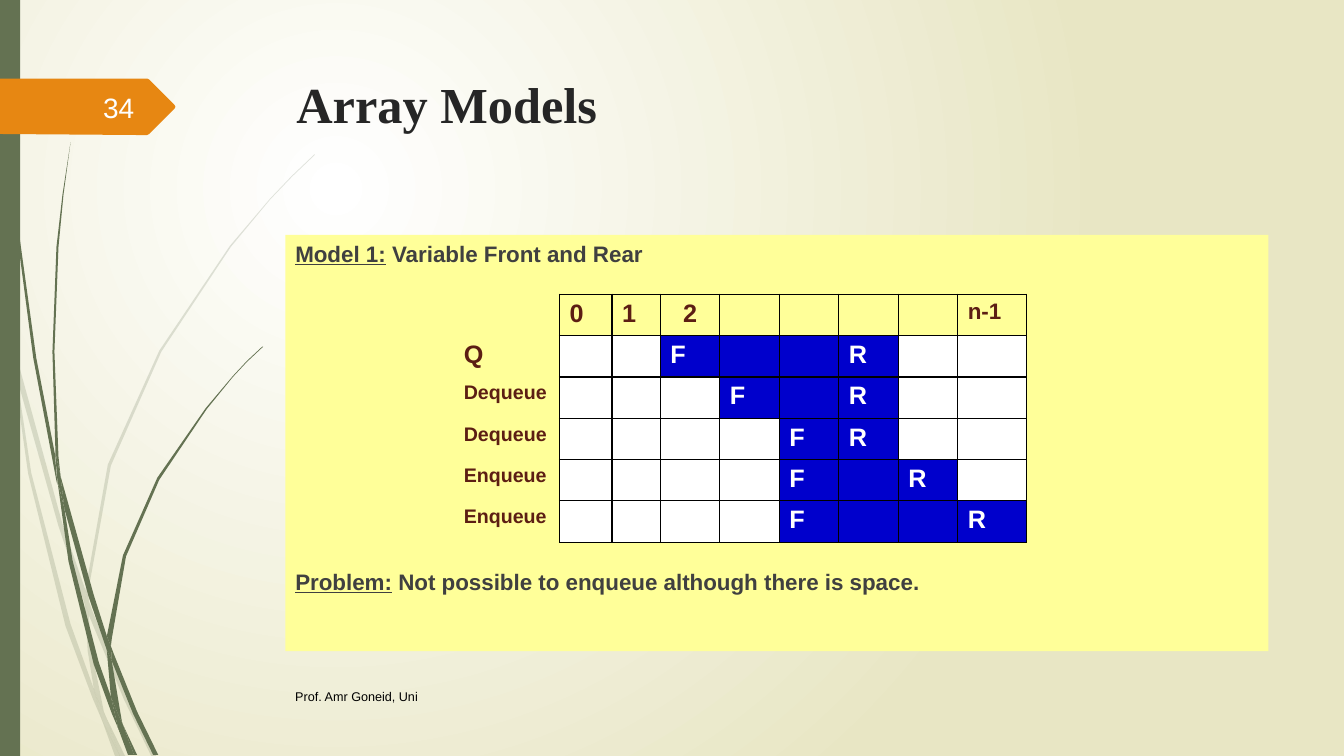
"""Build the slide on array models of a queue with variable front and rear."""
from lxml.etree import SubElement
from pptx import Presentation
from pptx.dml.color import RGBColor
from pptx.enum.shapes import MSO_SHAPE
from pptx.enum.text import MSO_ANCHOR, PP_ALIGN
from pptx.oxml.ns import qn
from pptx.util import Inches, Pt

WHITE = RGBColor(0xFF, 0xFF, 0xFF)
OFF_WHITE = RGBColor(0xFE, 0xFF, 0xFF)
BLACK = RGBColor(0, 0, 0)
CREAM = RGBColor(0xE8, 0xE6, 0xC4)
GREEN = RGBColor(0x64, 0x72, 0x52)
ORANGE = RGBColor(0xE7, 0x87, 0x12)
YELLOW = RGBColor(0xFF, 0xFF, 0x99)
BLUE = RGBColor(0, 0, 0xCC)
BROWN = RGBColor(0x5C, 0x1E, 0x13)
DARK_GRAY = RGBColor(0x40, 0x40, 0x40)
TITLE_GRAY = RGBColor(0x26, 0x26, 0x26)

TITLE = "Array Models"
MODEL = [("Model 1:", True), (" Variable Front and Rear", False)]
PROBLEM = [("Problem:", True), (" Not possible to enqueue although there is space.", False)]
FOOTER = "Prof. Amr Goneid, Uni"
PAGE_NUMBER = "34"

HEADINGS = [(0, "0", 18, PP_ALIGN.LEFT), (1, "1", 18, PP_ALIGN.LEFT),
            (2, "2", 18, PP_ALIGN.CENTER), (7, "n-1", 16, PP_ALIGN.LEFT)]
QUEUE_STATES = [("Q", 18, 2, 5), ("Dequeue", 14, 3, 5), ("Dequeue", 14, 4, 5),
                ("Enqueue", 14, 4, 6), ("Enqueue", 14, 4, 7)]
COLUMN_WIDTHS = [1.05, 0.52, 0.48] + [0.59] * 5 + [0.68]
ROW_HEIGHT = 0.41

PALE_STRANDS = [
    [(0.11, 3.5), (0.09, 3.22), (0, 2.82), (0, 2.99), (0.1, 3.44)],
    [(0.58, 5.22), (0.84, 5.99), (0.85, 5.86), (0.62, 5.2), (0.14, 3.45), (0.17, 3.76)],
    [(0.92, 6.07), (0.88, 5.96), (0.88, 6.1), (1.23, 6.94), (1.5, 7.5), (1.55, 7.5),
     (1.27, 6.92)],
    [(1.19, 7.5), (1.24, 7.5), (1.05, 7.11)],
    [(0.93, 6.83), (0.7, 6.19), (0.31, 4.69), (0.17, 3.76), (0.11, 3.5), (0.28, 4.7),
     (0.65, 6.21), (0.92, 6.93), (1.01, 7.14), (0.99, 7.07)],
    [(0.84, 5.99), (0.87, 6.46), (0.93, 6.83), (0.96, 6.92), (1.05, 7.11), (1.03, 7.06),
     (0.91, 6.46), (0.88, 6.1), (0.88, 6.08)],
    [(0.88, 5.84), (1.1, 4.62), (1.6, 3.49), (2.29, 2.45), (2.68, 1.98), (2.9, 1.75),
     (3.12, 1.54), (3.12, 1.53), (2.89, 1.75), (2.68, 1.97), (2.28, 2.44), (1.58, 3.48),
     (1.07, 4.61), (0.85, 5.84), (0.85, 5.86), (0.88, 5.96)],
    [(1.01, 7.14), (1.14, 7.5), (1.19, 7.5)],
    [(0.88, 6.08), (0.88, 6.1), (0.88, 5.96), (0.85, 5.86), (0.84, 5.99)],
    [(0.96, 6.92), (0.93, 6.83), (0.99, 7.07), (1.01, 7.14), (1.19, 7.5), (1.05, 7.11)],
]
DARK_STRANDS = [
    [(0.07, 1.1), (0.17, 2.33), (0.33, 3.55), (0.56, 4.77), (0.57, 4.81), (0.55, 4.57),
     (0.55, 4.53), (0.36, 3.55), (0.19, 2.32), (0.08, 1.09), (0.05, 0.48), (0.04, 0),
     (0.03, 0), (0.04, 0.48)],
    [(0.88, 5.92), (1.06, 6.45), (1.06, 6.31), (0.93, 5.9), (0.6, 4.72), (0.64, 5.05)],
    [(1.13, 6.49), (1.1, 6.41), (1.11, 6.56), (1.32, 7.08), (1.52, 7.49), (1.57, 7.49),
     (1.36, 7.06)],
    [(1.1, 6.91), (0.98, 6.57), (0.72, 5.56), (0.64, 5.05), (0.57, 4.77), (0.68, 5.57),
     (0.93, 6.59), (1.11, 7.08), (1.17, 7.22), (1.16, 7.17)],
    [(0.6, 4.72), (0.58, 4.53), (0.54, 3.49), (0.58, 2.45), (0.63, 1.93), (0.7, 1.41),
     (0.62, 1.93), (0.56, 2.45), (0.52, 3.49), (0.55, 4.49)],
    [(1.33, 7.49), (1.36, 7.49), (1.22, 7.19)],
    [(0.57, 4.77), (0.64, 5.05), (0.6, 4.72), (0.55, 4.49), (0.55, 4.53)],
    [(1.11, 6.33), (1.25, 5.52), (1.58, 4.76), (2.05, 4.06), (2.31, 3.74), (2.45, 3.59),
     (2.61, 3.44), (2.6, 3.44), (2.45, 3.58), (2.31, 3.73), (2.04, 4.05), (1.56, 4.74),
     (1.22, 5.51), (1.06, 6.31), (1.1, 6.41)],
    [(1.17, 7.22), (1.27, 7.49), (1.31, 7.49)],
    [(1.06, 6.45), (1.1, 6.91), (1.16, 7.06), (1.22, 7.19), (1.21, 7.16), (1.11, 6.56),
     (1.09, 6.51)],
    [(1.06, 6.45), (1.09, 6.51), (1.11, 6.56), (1.1, 6.41), (1.06, 6.31)],
    [(1.16, 7.06), (1.1, 6.91), (1.16, 7.17), (1.17, 7.22), (1.3, 7.49), (1.33, 7.49),
     (1.22, 7.19)],
]
PAGE_TAG = [(1.73, 1.08), (1.48, 1.33), (1.46, 1.34), (1.36, 1.34), (0, 1.33), (0, 0.78),
            (1.46, 0.78), (1.48, 0.79), (1.73, 1.04), (1.74, 1.06)]


def write(paragraph, text, size, color, font="Arial", bold=False, underline=False,
          align=PP_ALIGN.LEFT):
    paragraph.alignment = align
    run = paragraph.add_run()
    run.text = text
    run.font.name = font
    run.font.size = Pt(size)
    run.font.bold = bold
    run.font.underline = underline
    run.font.color.rgb = color


def paint(shape, color):
    shape.shadow.inherit = False
    shape.fill.solid()
    shape.fill.fore_color.rgb = color
    shape.line.fill.background()


def add_outline(slide, points, color, opacity=100):
    corners = [(Inches(x), Inches(y)) for x, y in points]
    builder = slide.shapes.build_freeform(*corners[0])
    builder.add_line_segments(corners[1:], close=True)
    shape = builder.convert_to_shape()
    paint(shape, color)
    if opacity < 100:
        color_element = shape.element.spPr.find(qn("a:solidFill"))[0]
        SubElement(color_element, qn("a:alpha"), val=str(opacity * 1000))


def add_rectangle(slide, box, color):
    shape = slide.shapes.add_shape(MSO_SHAPE.RECTANGLE, *map(Inches, box))
    paint(shape, color)
    return shape


def add_text(slide, box, text, anchor=MSO_ANCHOR.MIDDLE, **style):
    frame = slide.shapes.add_textbox(*map(Inches, box)).text_frame
    frame.word_wrap = True
    frame.vertical_anchor = anchor
    write(frame.paragraphs[0], text, **style)


def add_borders(cell, sides):
    properties = cell._tc.get_or_add_tcPr()
    for side in sides:
        line = SubElement(properties, qn(f"a:ln{side}"), w=str(Pt(1)))
        fill = SubElement(line, qn("a:solidFill"))
        SubElement(fill, qn("a:srgbClr"), val=str(BLACK))


def set_background(slide):
    fill = slide.background.fill
    fill.gradient()
    for stop, color, position in zip(fill.gradient_stops, (WHITE, CREAM), (0, 1)):
        stop.color.rgb = color
        stop.position = position
    gradient = slide.element.find(".//" + qn("a:gradFill"))
    gradient.remove(gradient.find(qn("a:lin")))
    circle = SubElement(gradient, qn("a:path"), path="circle")
    SubElement(circle, qn("a:fillToRect"), l="50000", t="50000", r="100000", b="100000")


def add_body(slide):
    frame = add_rectangle(slide, (2.83, 2.33, 9.75, 4.13), YELLOW).text_frame
    frame.word_wrap = True
    frame.vertical_anchor = MSO_ANCHOR.TOP
    problem = frame.add_paragraph()
    problem.space_before = Pt(215)
    for paragraph, parts in ((frame.paragraphs[0], MODEL), (problem, PROBLEM)):
        for text, underline in parts:
            write(paragraph, text, size=16, color=DARK_GRAY, bold=True, underline=underline)


def add_queue_table(slide):
    row_count = len(QUEUE_STATES) + 1
    frame = slide.shapes.add_table(
        row_count, len(COLUMN_WIDTHS), Inches(4.5), Inches(2.92),
        Inches(sum(COLUMN_WIDTHS)), Inches(ROW_HEIGHT * row_count))
    table = frame.table
    table.first_row = table.horz_banding = False
    style = frame.element.find(".//" + qn("a:tableStyleId"))
    style.text = "{2D5ABB26-0587-4C30-8999-92F81FD0307C}"
    for column, width in zip(table.columns, COLUMN_WIDTHS):
        column.width = Inches(width)
    for row in table.rows:
        row.height = Inches(ROW_HEIGHT)
        for index, cell in enumerate(row.cells):
            add_borders(cell, "LRTB" if index else "R")
    for slot, text, size, align in HEADINGS:
        write(table.cell(0, slot + 1).text_frame.paragraphs[0], text, size=size,
              color=BROWN, bold=True, align=align)
    for row, (label, size, front, rear) in enumerate(QUEUE_STATES, 1):
        write(table.cell(row, 0).text_frame.paragraphs[0], label, size=size,
              color=BROWN, bold=True)
        for slot in range(len(COLUMN_WIDTHS) - 1):
            cell = table.cell(row, slot + 1)
            cell.fill.solid()
            cell.fill.fore_color.rgb = BLUE if front <= slot <= rear else WHITE
        for slot, mark in ((front, "F"), (rear, "R")):
            write(table.cell(row, slot + 1).text_frame.paragraphs[0], mark, size=18,
                  color=WHITE, bold=True)


def main():
    presentation = Presentation()
    presentation.slide_width = Inches(13.33)
    presentation.slide_height = Inches(7.5)
    slide = presentation.slides.add_slide(presentation.slide_layouts[6])
    set_background(slide)
    for strands, opacity in ((PALE_STRANDS, 20), (DARK_STRANDS, 100)):
        for points in strands:
            add_outline(slide, points, GREEN, opacity)
    add_rectangle(slide, (0, 0, 0.2, 7.5), GREEN)
    add_outline(slide, PAGE_TAG, ORANGE)
    add_text(slide, (2.84, 0.68, 9.75, 1.4), TITLE, anchor=MSO_ANCHOR.TOP, size=36,
             color=TITLE_GRAY, font="Times New Roman", bold=True)
    add_body(slide)
    add_text(slide, (2.83, 6.71, 8.33, 0.4), FOOTER, size=9, color=BLACK)
    add_text(slide, (0.58, 0.86, 0.85, 0.4), PAGE_NUMBER, size=20, color=OFF_WHITE,
             align=PP_ALIGN.RIGHT)
    add_queue_table(slide)
    presentation.save("out.pptx")


if __name__ == "__main__":
    main()
